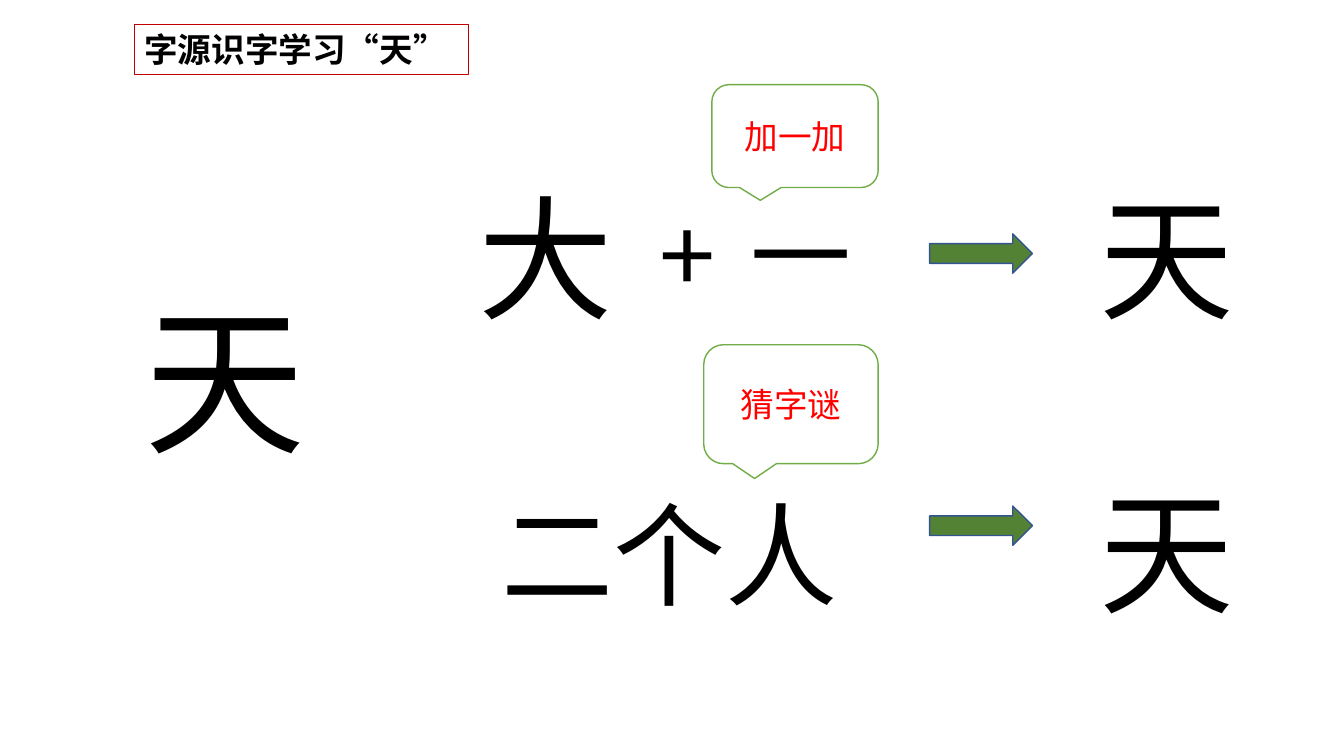
from lxml.etree import SubElement
from pptx import Presentation
from pptx.dml.color import RGBColor
from pptx.enum.shapes import MSO_SHAPE as Preset
from pptx.enum.text import MSO_ANCHOR as Anchor, MSO_AUTO_SIZE as AutoSize, PP_ALIGN as Align
from pptx.oxml.ns import qn
from pptx.util import Inches, Pt

COLORS = {
    "ink": "000000",
    "hint": "FF0000",
    "paper": "FFFFFF",
    "callout_line": "70AD47",
    "arrow_fill": "548235",
    "arrow_line": "325491",
    "title_line": "C00000",
}
HAN_FONT = "Noto Sans CJK SC"


def color(name):
    """Return the named colour."""
    return RGBColor.from_string(COLORS[name])


def write_text(shape, text, size, font=HAN_FONT, ink="ink", bold=False,
               align=Align.LEFT, anchor=Anchor.TOP, wrap=True):
    """Put one formatted paragraph into a shape."""
    frame = shape.text_frame
    frame.auto_size = AutoSize.NONE
    frame.word_wrap = wrap
    frame.vertical_anchor = anchor
    paragraph = frame.paragraphs[0]
    paragraph.alignment = align
    run = paragraph.add_run()
    run.text = text
    run.font.size = Pt(size)
    run.font.bold = bold
    run.font.color.rgb = color(ink)
    run.font.name = font
    SubElement(run.font._element, qn("a:ea"), typeface=font)


def add_title(slide, text):
    """Move the title placeholder into its red frame."""
    title = slide.shapes.title
    title.left, title.top = Inches(1.33), Inches(0.24)
    title.width, title.height = Inches(3.32), Inches(0.5)
    title.line.color.rgb = color("title_line")
    title.line.width = Pt(0.75)
    write_text(title, text, 24, bold=True)


def add_characters(slide, text, size, left, top, width, height, wrap=True):
    """Add large characters in a text box."""
    box = slide.shapes.add_textbox(Inches(left), Inches(top), Inches(width), Inches(height))
    write_text(box, text, size, wrap=wrap)


def add_preset(slide, preset, fill, line, left, top, width, height):
    """Add a flat preset shape with a fill and an outline."""
    shape = slide.shapes.add_shape(
        preset, Inches(left), Inches(top), Inches(width), Inches(height))
    shape.shadow.inherit = False
    shape.fill.solid()
    shape.fill.fore_color.rgb = color(fill)
    shape.line.color.rgb = color(line)
    shape.line.width = Pt(1)
    return shape


def add_callout(slide, text, left, top, width, height):
    """Add a speech bubble naming the learning method."""
    bubble = add_preset(slide, Preset.ROUNDED_RECTANGULAR_CALLOUT, "paper", "callout_line",
                        left, top, width, height)
    write_text(bubble, text, 24, font="Calibri", ink="hint",
               align=Align.CENTER, anchor=Anchor.MIDDLE)


def add_result(slide, text, arrow_top, text_top):
    """Add an arrow and the character it leads to."""
    add_preset(slide, Preset.RIGHT_ARROW, "arrow_fill", "arrow_line",
               9.22, arrow_top, 1.02, 0.39)
    add_characters(slide, text, 96, 10.81, text_top, 1.53, 1.72, wrap=False)


def main():
    """Build and save the slide."""
    presentation = Presentation()
    presentation.slide_width, presentation.slide_height = Inches(13.33), Inches(7.5)
    slide = presentation.slides.add_slide(presentation.slide_layouts[5])
    add_title(slide, "字源识字学习“天”")
    add_characters(slide, "天", 115, 1.33, 2.73, 1.61, 2.03)

    add_characters(slide, "大", 96, 4.65, 1.69, 1.61, 1.72)
    add_characters(slide, "+", 72, 6.44, 1.86, 1, 1.31)
    add_characters(slide, "一", 72, 7.34, 1.86, 1.88, 1.31)
    add_callout(slide, "加一加", 7.06, 0.84, 1.65, 1.02)
    add_result(slide, "天", arrow_top=2.32, text_top=1.69)

    add_characters(slide, "二个人", 80, 4.88, 4.77, 3.83, 1.45)
    add_callout(slide, "猜字谜", 6.98, 3.42, 1.73, 1.18)
    add_result(slide, "天", arrow_top=5.02, text_top=4.6)
    presentation.save("out.pptx")


if __name__ == "__main__":
    main()
